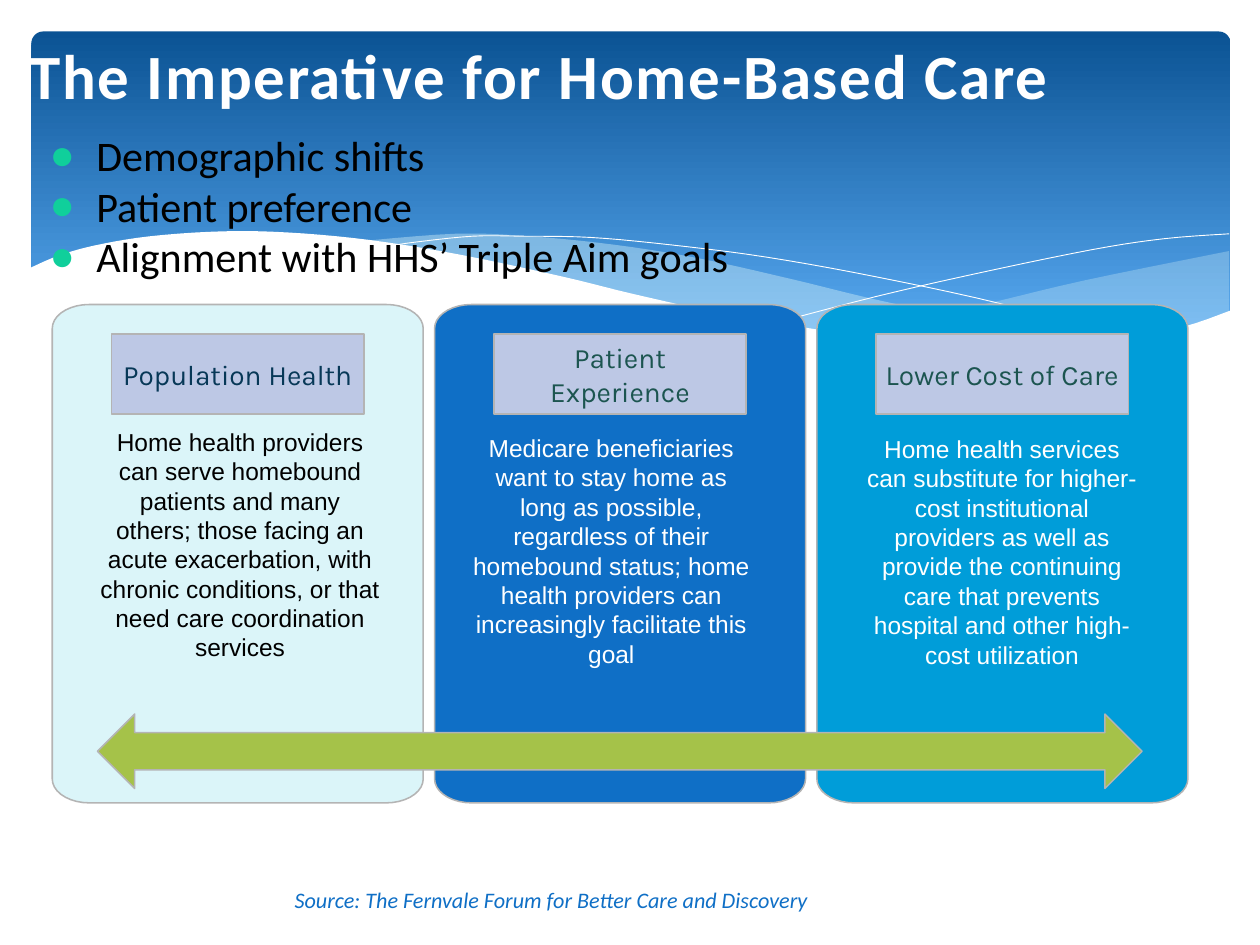
"""Build the slide on the imperative for home-based care."""
from math import cos, radians, sin

from pptx import Presentation
from pptx import util as u
from pptx.dml.color import RGBColor
from pptx.enum import shapes, text
from pptx.oxml.ns import qn

Pt = u.Pt
TITLE = "The Imperative for Home-Based Care"
REASONS = ["Demographic shifts", "Patient preference", "Alignment with HHS’ Triple Aim goals"]
SOURCE = "Source: The Fernvale Forum for Better Care and Discovery"
AIMS = [
    dict(name="Population Health", fill="DBF5F9", name_color="073857", note_color="000000",
         note_at=(73.4, 343.4),
         note="Home health providers can serve homebound patients and many others; those facing an "
              "acute exacerbation, with chronic conditions, or that need care coordination services"),
    dict(name="Patient Experience", fill="0F6FC6", name_color="1C5550", note_color="FFFFFF",
         note_at=(375.1, 348.5),
         note="Medicare beneficiaries want to stay home as long as possible, regardless of their "
              "homebound status; home health providers can increasingly facilitate this goal"),
    dict(name="Lower Cost of Care", fill="009DD9", name_color="1C5550", note_color="FFFFFF",
         note_at=(692.6, 349.2),
         note="Home health services can substitute for higher-cost institutional providers as well as "
              "provide the continuing care that prevents hospital and other high-cost utilization"),
]
RIGHT_WAVE = [
    [(999, 204), (881, 228), (797, 248), (723, 263.5), (678, 271)],
    [(678, 271), (736, 279), (800, 283), (855, 284), (911, 279), (958, 268), (999, 253)],
]
MIDDLE_WAVE = [
    [(914, 279), (827, 266), (723, 246), (644, 227), (568, 210), (500, 199), (430, 192),
     (370, 190), (293, 196)],
    [(293, 196), (351, 204), (414, 216), (460, 227), (542, 246), (616, 261), (697, 274),
     (779, 283), (848, 285), (914, 279)],
]
FALLING_LINE = [[(317, 200), (336, 197), (384, 192), (426, 192), (480, 193), (545, 199),
                 (623, 209), (712, 225), (814, 247), (929, 278)]]
RISING_LINE = [[(628, 263), (712, 241), (795, 222), (887, 203), (946, 194), (999, 190)]]
WHITE_WAVE = [
    [(1001, 252), (962, 265.5), (909, 276), (843, 283), (762, 282), (685, 271), (593, 256),
     (515, 239), (458, 225), (374, 207), (300, 195), (235, 189), (181, 188), (122, 192),
     (77, 199.5), (47, 208), (24, 218)],
    [(24, 337), (1001, 337)],
]
THEME = dict(
    banner=("0B5394", "59AAF2"), wave="DBF5F9", white="FFFFFF", black="000000",
    border="B4B4B4", label="BDC8E5", arrow="A5C249", bullet="10CF9B", source="0F6FC6",
    title_size=51.2, body_size=34.2, label_size=22.8, note_size=19.9, source_size=18,
    text_font="Calibri", label_font="Karla", note_font="Arial",
)
CARD_LEFT, CARD_TOP, CARD_WIDTH, CARD_HEIGHT, CARD_PITCH = 42.5, 247.5, 301.5, 405, 310.7
CORNER_X, CORNER_Y = 30, 19.5
LABEL_LEFT, LABEL_TOP, LABEL_WIDTH, LABEL_HEIGHT = 48.2, 271.5, 205, 65


def rgb(name):
    """Return the colour for a hexadecimal name."""
    return RGBColor.from_string(name)


def box(left, top, width, height):
    """Return a position and size in points."""
    return Pt(left), Pt(top), Pt(width), Pt(height)


def paint(shape, fill=None, line=None, width=1.25, alpha=None):
    """Set fill, outline and transparency of a shape without shadow."""
    shape.shadow.inherit = False
    if fill:
        shape.fill.solid()
        shape.fill.fore_color.rgb = rgb(fill)
    else:
        shape.fill.background()
    if line:
        shape.line.color.rgb = rgb(line)
        shape.line.width = Pt(width)
    else:
        shape.line.fill.background()
    if alpha:
        color = shape.element.spPr.find(qn("a:solidFill"))[0]
        color.append(color.makeelement(qn("a:alpha"), {"val": str(alpha * 1000)}))


def write(frame, lines, font, size, color, align=text.PP_ALIGN.CENTER, bold=False, italic=False):
    """Write lines into a text frame and format their runs."""
    frame.word_wrap = True
    frame.text = "\n".join(lines)
    for paragraph in frame.paragraphs:
        paragraph.alignment = align
        paragraph.space_before = Pt(0)
        for run in paragraph.runs:
            run.font.name, run.font.size = font, Pt(size)
            run.font.bold, run.font.italic = bold, italic
            run.font.color.rgb = rgb(color)


def smooth(points, steps=5):
    """Return a smooth curve through the points."""
    padded = [points[0], *points, points[-1]]
    curve = [points[0]]
    for a, b, c, d in zip(padded, padded[1:], padded[2:], padded[3:]):
        for step in range(1, steps + 1):
            t = step / steps
            curve.append(tuple(
                (2 * q + (r - p) * t + (2 * p - 5 * q + 4 * r - s) * t ** 2
                 + (3 * q - p - 3 * r + s) * t ** 3) / 2
                for p, q, r, s in zip(a, b, c, d)))
    return curve


def outline(slide, points, close=True):
    """Add a freeform through points."""
    corners = [(Pt(x), Pt(y)) for x, y in points]
    builder = slide.shapes.build_freeform(*corners[0])
    builder.add_line_segments(corners[1:], close=close)
    return builder.convert_to_shape()


def add_wave(slide, edges, close=True, **style):
    """Add one wave of the banner."""
    points = [point for edge in edges for point in smooth(edge)]
    paint(outline(slide, points, close), **style)


def add_banner(slide):
    """Add the gradient banner and its waves."""
    banner = slide.shapes.add_shape(shapes.MSO_SHAPE.ROUNDED_RECTANGLE, *box(25.6, 25.6, 974.4, 276.5))
    banner.adjustments[0] = 0.034
    paint(banner)
    banner.fill.gradient()
    banner.fill.gradient_angle = 270
    for stop, color, position in zip(banner.fill.gradient_stops, THEME["banner"], (0, 0.9)):
        stop.color.rgb, stop.position = rgb(color), position
    add_wave(slide, RIGHT_WAVE, fill=THEME["wave"], alpha=29)
    add_wave(slide, MIDDLE_WAVE, fill=THEME["wave"], alpha=40)
    for edges in (FALLING_LINE, RISING_LINE):
        add_wave(slide, edges, close=False, line=THEME["white"], width=0)
    add_wave(slide, WHITE_WAVE, fill=THEME["white"])


def add_card(slide, left, aim):
    """Add a card with elliptical corners and its label."""
    right, bottom = left + CARD_WIDTH - CORNER_X, CARD_TOP + CARD_HEIGHT - CORNER_Y
    x, y = left + CORNER_X, CARD_TOP + CORNER_Y
    centres = [(right, bottom), (x, bottom), (x, y), (right, y)]
    points = [(cx + CORNER_X * cos(radians(angle)), cy + CORNER_Y * sin(radians(angle)))
              for quarter, (cx, cy) in enumerate(centres)
              for angle in range(quarter * 90, quarter * 90 + 91, 10)]
    paint(outline(slide, points), aim["fill"], THEME["border"])
    label = slide.shapes.add_shape(shapes.MSO_SHAPE.RECTANGLE, *box(
        left + LABEL_LEFT, LABEL_TOP, LABEL_WIDTH, LABEL_HEIGHT))
    paint(label, THEME["label"], THEME["border"])
    label.text_frame.vertical_anchor = text.MSO_ANCHOR.MIDDLE
    write(label.text_frame, [aim["name"]], THEME["label_font"], THEME["label_size"], aim["name_color"])


def place(slide, placeholder, area, anchor):
    """Move a placeholder to the front and set its frame."""
    placeholder.left, placeholder.top, placeholder.width, placeholder.height = box(*area)
    slide.shapes.element.append(placeholder.element)
    frame = placeholder.text_frame
    frame.auto_size, frame.vertical_anchor = text.MSO_AUTO_SIZE.NONE, anchor
    frame.margin_left = frame.margin_right = Pt(6.5)
    frame.margin_top = frame.margin_bottom = Pt(3)
    return frame


def add_bullet(paragraph):
    """Give a paragraph a hanging round bullet."""
    properties = paragraph._p.get_or_add_pPr()
    properties.set("marL", str(Pt(38)))
    properties.set("indent", str(-Pt(38)))
    color = properties.makeelement(qn("a:buClr"), {})
    color.append(color.makeelement(qn("a:srgbClr"), {"val": THEME["bullet"]}))
    properties.append(color)
    properties.append(properties.makeelement(qn("a:buChar"), {"char": "●"}))


def main():
    """Build and save the slide."""
    presentation = Presentation()
    presentation.slide_width, presentation.slide_height = Pt(1024), Pt(768)
    slide = presentation.slides.add_slide(presentation.slide_layouts[1])
    add_banner(slide)
    for index, aim in enumerate(AIMS):
        add_card(slide, CARD_LEFT + index * CARD_PITCH, aim)
    arrow = slide.shapes.add_shape(shapes.MSO_SHAPE.LEFT_RIGHT_ARROW, *box(79.2, 580.3, 849, 60.5))
    paint(arrow, THEME["arrow"], THEME["border"])
    for aim in AIMS:
        frame = slide.shapes.add_textbox(*box(*aim["note_at"], 243.4, 200)).text_frame
        frame.margin_left = frame.margin_right = Pt(7.95)
        write(frame, [aim["note"]], THEME["note_font"], THEME["note_size"], aim["note_color"])

    left = text.PP_ALIGN.LEFT
    title = place(slide, slide.shapes.title, (17.3, 44.6, 945, 49.7), text.MSO_ANCHOR.BOTTOM)
    write(title, [TITLE], THEME["text_font"], THEME["title_size"], THEME["white"], left, bold=True)
    title.paragraphs[0].runs[0].font._element.set("spc", "140")
    body = place(slide, slide.placeholders[1], (33.8, 102.2, 955, 649), text.MSO_ANCHOR.TOP)
    write(body, REASONS, THEME["text_font"], THEME["body_size"], THEME["black"], left)
    for paragraph in body.paragraphs:
        add_bullet(paragraph)
    source = slide.shapes.add_textbox(*box(42.5, 717, 811, 29))
    write(source.text_frame, [SOURCE], THEME["text_font"], THEME["source_size"], THEME["source"], italic=True)
    presentation.save("out.pptx")


if __name__ == "__main__":
    main()
